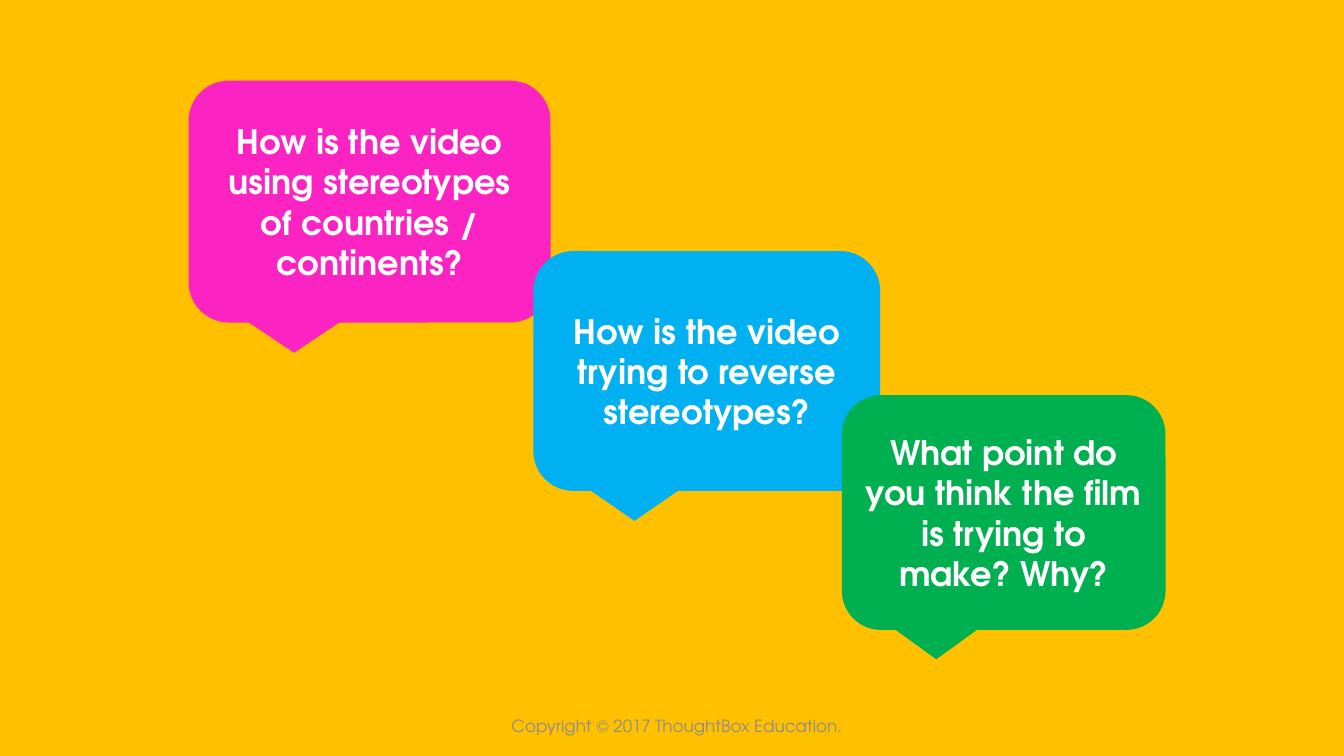
from pptx import Presentation
from pptx.dml.color import RGBColor as RGB
from pptx.enum.shapes import MSO_SHAPE as Shape
from pptx.enum.text import MSO_ANCHOR as Anchor, PP_ALIGN as Align
from pptx.util import Inches, Pt

theme = {
    "face": "TeX Gyre Adventor",
    "back": RGB.from_string("FFC000"),
    "pink": RGB.from_string("FB23C2"),
    "blue": RGB.from_string("00B0F0"),
    "green": RGB.from_string("00B050"),
    "white": RGB.from_string("FFFFFF"),
    "grey": RGB.from_string("8C8C8C"),
    "ask": Pt(24),
    "foot": Pt(12),
}


def write(shape, text, size, color, bold):
    frame = shape.text_frame
    frame.word_wrap = True
    frame.vertical_anchor = Anchor.MIDDLE
    para = frame.paragraphs[0]
    para.alignment = Align.CENTER
    run = para.add_run()
    run.text = text
    style = {"name": theme["face"], "size": theme[size], "bold": bold}
    for key, value in style.items():
        setattr(run.font, key, value)
    run.font.color.rgb = theme[color]


deck = Presentation()
deck.slide_width = Inches(13.33)
deck.slide_height = Inches(7.5)
slide = deck.slides.add_slide(deck.slide_layouts[6])
slide.background.fill.solid()
slide.background.fill.fore_color.rgb = theme["back"]

footer = slide.shapes.add_textbox(Inches(4.54), Inches(7), Inches(4.5), Inches(0.4))
footer.text_frame.margin_right = Inches(0.25)
write(footer, "Copyright © 2017 ThoughtBox Education.", "foot", "grey", False)

bubbles = [
    ("pink", (1.87, 0.8, 3.59, 2.4), "How is the video using stereotypes of countries / continents?"),
    ("blue", (5.29, 2.49, 3.44, 2.38), "How is the video trying to reverse stereotypes?"),
    ("green", (8.35, 3.92, 3.21, 2.33), "What point do you think the film is trying to make? Why?"),
]
for color, box, text in bubbles:
    bubble = slide.shapes.add_shape(Shape.ROUNDED_RECTANGULAR_CALLOUT, *map(Inches, box))
    bubble.shadow.inherit = False
    bubble.fill.solid()
    bubble.fill.fore_color.rgb = theme[color]
    bubble.line.fill.background()
    write(bubble, text, "ask", "white", True)

deck.save("out.pptx")
